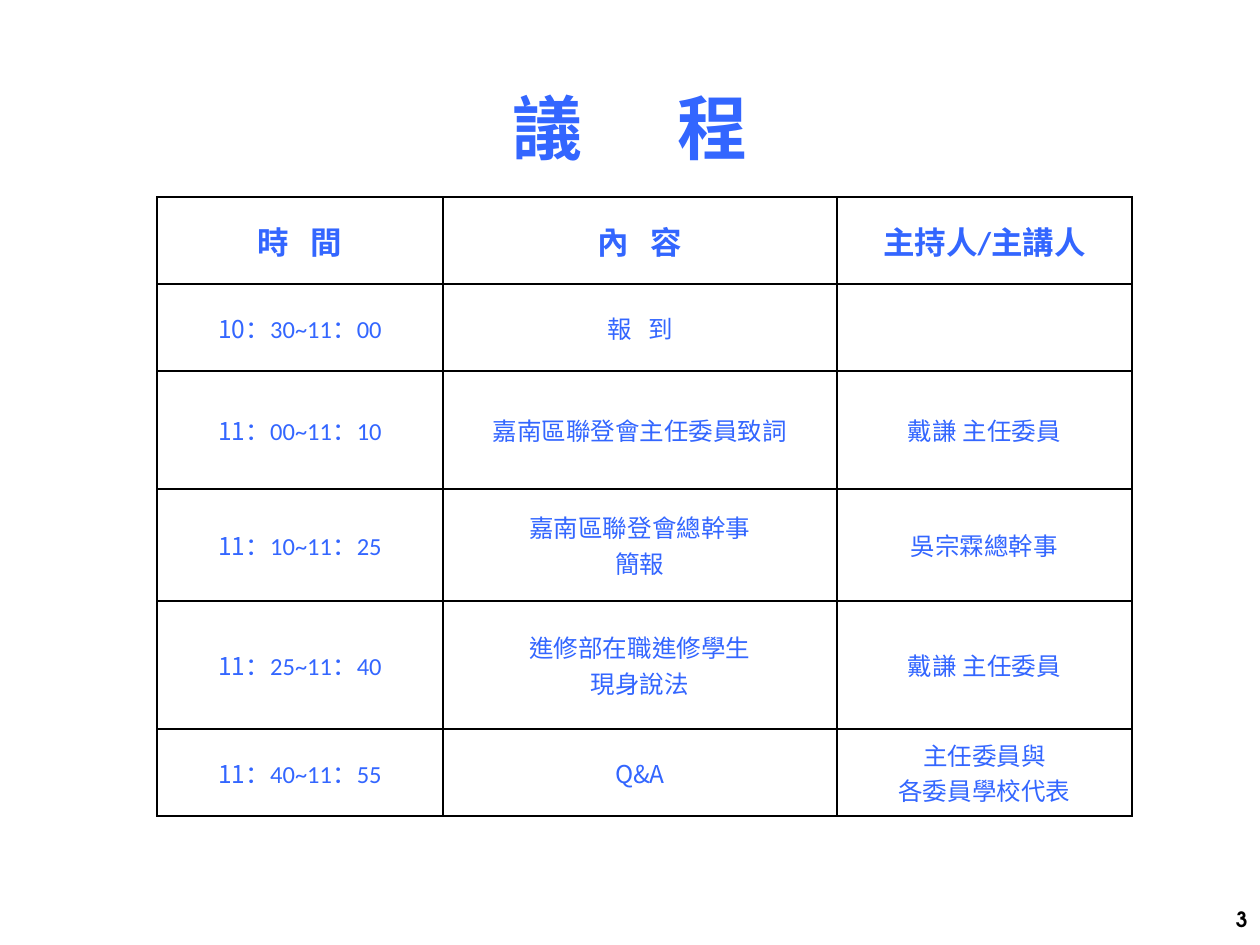
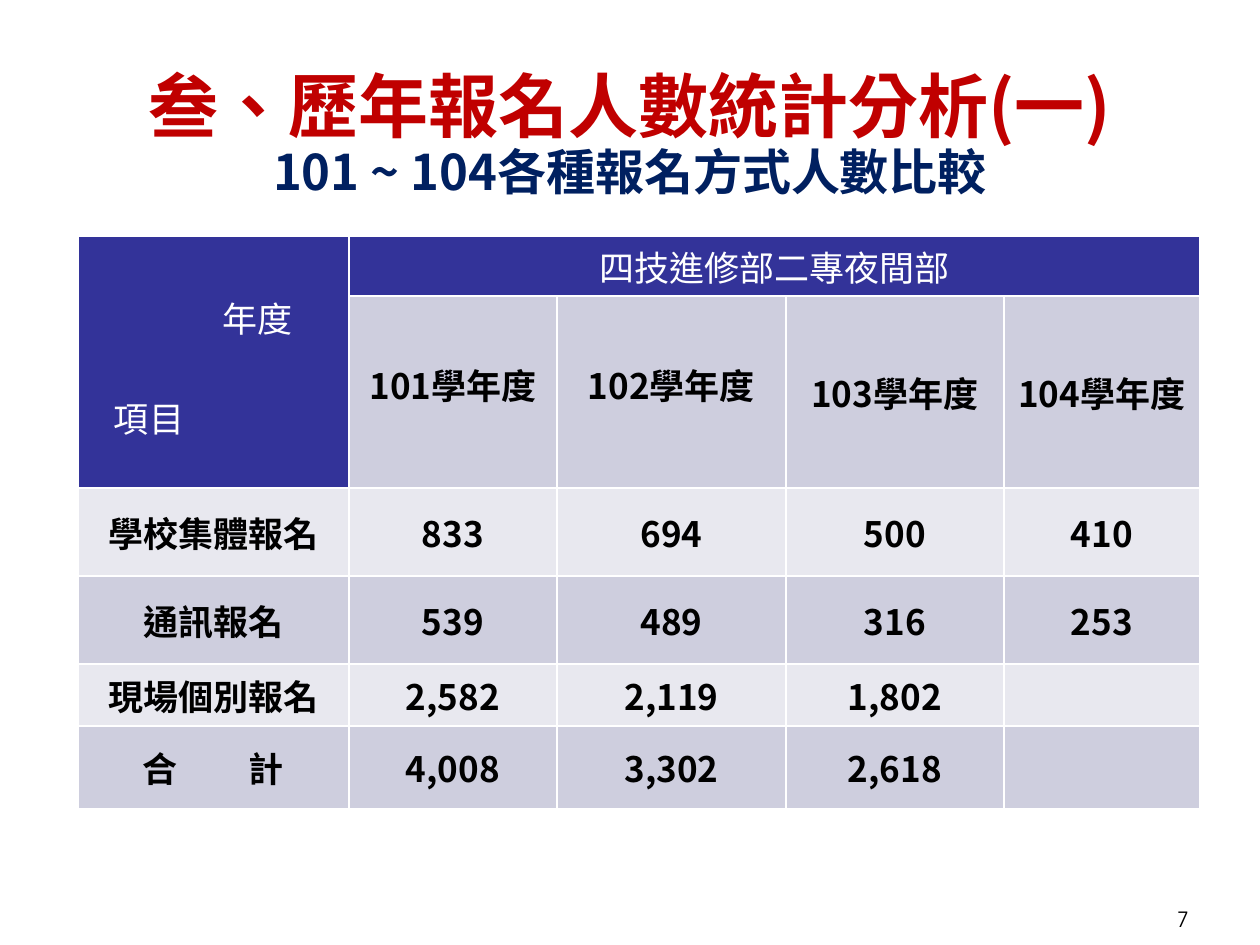
from lxml import etree
from pptx import Presentation, util as u
from pptx.dml.color import RGBColor
from pptx.enum import text
from pptx.oxml.ns import qn

SCALE = 914400 / 126
CJK, LATIN, NUMBER_FONT = "Noto Sans CJK SC", "Calibri", "TeX Gyre Adventor"
BLACK, WHITE, BLUE, RED, NAVY = "000000", "FFFFFF", "3366FF", "C00000", "002060"
HEADER_FILL, DARK_BAND, LIGHT_BAND = "333399", "CECEDE", "E8E8EF"
ALIGN = {"left": text.PP_ALIGN.LEFT, "center": text.PP_ALIGN.CENTER, "right": text.PP_ALIGN.RIGHT}

AGENDA_COLUMNS = [286, 394, 295]
AGENDA_ROWS = [87, 87, 118, 112, 128, 87]
AGENDA_HEADS = ["時 間", "內 容", "主持人/主講人"]
AGENDA = [
    ("10：30~11：00", ["報 到"], []),
    ("11：00~11：10", ["嘉南區聯登會主任委員致詞"], ["戴謙 主任委員"]),
    ("11：10~11：25", ["嘉南區聯登會總幹事", "簡報"], ["吳宗霖總幹事"]),
    ("11：25~11：40", ["進修部在職進修學生", "現身說法"], ["戴謙 主任委員"]),
    ("11：40~11：55", ["Q&A"], ["主任委員與", "各委員學校代表"]),
]

COUNT_COLUMNS = [271, 208, 229, 218, 196]
COUNT_ROWS = [60, 180, 88, 88, 62, 83]
YEARS = ["101學年度", "102學年度", "103學年度", "104學年度"]
COUNTS = [
    ("學校集體報名", "833", "694", "500", "410"),
    ("通訊報名", "539", "489", "316", "253"),
    ("現場個別報名", "2,582", "2,119", "1,802", ""),
    ("合 計", "4,008", "3,302", "2,618", ""),
]


def px(value):
    return u.Emu(round(value * SCALE))


def color(value):
    return RGBColor.from_string(value)


def add_run(paragraph, words, size, ink, font, bold, spacing=0):
    run = paragraph.add_run()
    run.text = words
    run.font.size, run.font.bold, run.font.name = u.Pt(size), bold, font
    run.font.color.rgb = color(ink)
    properties = run._r.get_or_add_rPr()
    properties.set("lang", "zh-TW")
    if spacing:
        properties.set("spc", str(spacing * 100))
    east_asian = etree.SubElement(properties, qn("a:ea"))
    east_asian.set("typeface", CJK)


def write(frame, words, size=14, ink=BLACK, font=CJK, bold=False, align="center",
          gap=0, before=0, line=None, indent=0, right_indent=0, new=False):
    paragraph = frame.add_paragraph() if new else frame.paragraphs[0]
    paragraph.alignment = ALIGN[align]
    paragraph.space_before = u.Pt(before)
    if line:
        paragraph.line_spacing = line
    for name, value in (("marL", indent), ("marR", right_indent)):
        if value:
            paragraph._p.get_or_add_pPr().set(name, str(px(value)))
    pieces = words if isinstance(words, list) else [(words, font)]
    for piece, piece_font in pieces:
        if gap:
            first, space, last = piece.partition(" ")
            add_run(paragraph, first, size, ink, piece_font, bold)
            if space:
                add_run(paragraph, space, size, ink, piece_font, bold, gap)
                add_run(paragraph, last, size, ink, piece_font, bold)
        else:
            add_run(paragraph, piece, size, ink, piece_font, bold)


def add_box(slide, left, top, width, height):
    frame = slide.shapes.add_textbox(*map(px, (left, top, width, height))).text_frame
    frame.word_wrap = True
    return frame


def add_page_number(slide, left, number, bold):
    frame = add_box(slide, left, 900, 294, 44)
    write(frame, number, size=12, font=NUMBER_FONT, bold=bold, align="right")


def add_grid(slide, left, top, columns, rows, border, margins):
    frame = slide.shapes.add_table(len(rows), len(columns), px(left), px(top),
                                   px(sum(columns)), px(sum(rows)))
    table = frame.table
    table.first_row = table.horz_banding = False
    for column, width in zip(table.columns, columns):
        column.width = px(width)
    for row, height in zip(table.rows, rows):
        row.height = px(height)
    side, edge = margins
    for cell in table.iter_cells():
        cell.vertical_anchor = text.MSO_ANCHOR.MIDDLE
        cell.margin_left = cell.margin_right = px(side)
        cell.margin_top = cell.margin_bottom = px(edge)
        for name in ("lnL", "lnR", "lnT", "lnB"):
            line = etree.SubElement(cell._tc.get_or_add_tcPr(), qn("a:" + name), w="12700")
            solid = etree.SubElement(line, qn("a:solidFill"))
            etree.SubElement(solid, qn("a:srgbClr"), val=border)
        cell.fill.background()
    return table


def paint(cell, fill):
    cell.fill.solid()
    cell.fill.fore_color.rgb = color(fill)


def build_agenda(slide):
    write(add_box(slide, 0, 88, 1260, 199), "議 程", size=40, ink=BLUE, bold=True, gap=45, line=0.9)
    add_page_number(slide, 966, "3", True)
    table = add_grid(slide, 157, 197, AGENDA_COLUMNS, AGENDA_ROWS, BLACK, (9, 0))
    for column, head in enumerate(AGENDA_HEADS):
        write(table.cell(0, column).text_frame, head, size=18, ink=BLUE, font=LATIN, bold=True, gap=8)
    for row, (period, topic, speaker) in enumerate(AGENDA, 1):
        hour, rest = period[:2], period[2:]
        write(table.cell(row, 0).text_frame, [(hour, CJK), (rest, LATIN)], ink=BLUE)
        for column, lines in enumerate((topic, speaker), 1):
            for index, words in enumerate(lines):
                write(table.cell(row, column).text_frame, words, ink=BLUE,
                      font=CJK if words == "Q&A" else LATIN,
                      gap=6 if words == "報 到" else 0, new=index > 0)


def build_counts(slide):
    add_page_number(slide, 907, "7", False)
    title = add_box(slide, 0, 66, 1260, 169)
    write(title, "叁、歷年報名人數統計分析(一)", size=40, ink=RED, bold=True, line=0.9)
    write(title, "101 ~ 104各種報名方式人數比較", size=28, ink=NAVY, bold=True, line=0.9, new=True)

    table = add_grid(slide, 78, 236, COUNT_COLUMNS, COUNT_ROWS, WHITE, (13, 3))
    corner, group = table.cell(0, 0), table.cell(0, 1)
    corner.merge(table.cell(1, 0))
    group.merge(table.cell(0, 4))
    for cell in (corner, group):
        paint(cell, HEADER_FILL)
    corner.vertical_anchor = text.MSO_ANCHOR.TOP
    corner.margin_top = px(56)
    write(corner.text_frame, "年度", size=20, ink=WHITE, align="right", right_indent=43)
    write(corner.text_frame, "項目", size=20, ink=WHITE, align="left", indent=23, before=28, new=True)
    write(group.text_frame, "四技進修部二專夜間部", size=20, ink=WHITE)

    for column, year in enumerate(YEARS, 1):
        cell = table.cell(1, column)
        paint(cell, DARK_BAND)
        if column < 3:
            cell.margin_bottom = px(18)
        write(cell.text_frame, year, size=20, bold=True)
    for row, values in enumerate(COUNTS, 2):
        for column, value in enumerate(values):
            cell = table.cell(row, column)
            paint(cell, DARK_BAND if row % 2 else LIGHT_BAND)
            if value:
                write(cell.text_frame, value, size=20, bold=True, gap=36 if " " in value else 0)


def main():
    presentation = Presentation()
    presentation.slide_width, presentation.slide_height = px(1260), px(945)
    for build in (build_agenda, build_counts):
        build(presentation.slides.add_slide(presentation.slide_layouts[6]))
    presentation.save("out.pptx")


if __name__ == "__main__":
    main()
